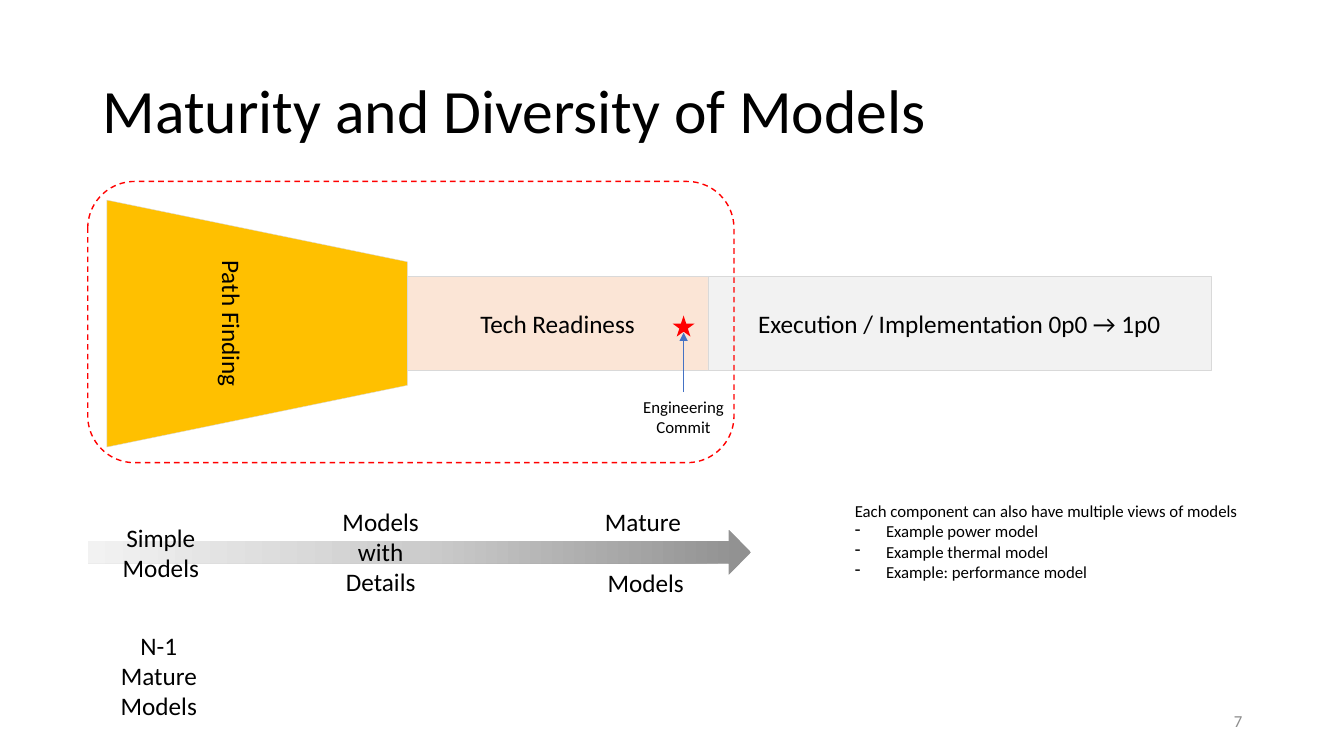
"""Build the slide on maturity and diversity of models."""
from copy import deepcopy

from lxml.etree import SubElement
from pptx import Presentation
from pptx.dml.color import RGBColor
from pptx.enum.dml import MSO_LINE
from pptx.enum.shapes import MSO_CONNECTOR, MSO_SHAPE
from pptx.enum.text import MSO_ANCHOR, PP_ALIGN
from pptx.oxml.ns import qn
from pptx.util import Inches, Pt

FONT = "Calibri"
COLORS = {
    "text": "000000", "number": "8C8C8C", "border": "D9D9D9",
    "finding": "FFC000", "readiness": "FBE5D6", "execution": "F2F2F2",
    "alert": "FF0000", "pointer": "4472C4",
}
MATURITY_GRADIENT = [(0, "909090"), (50, "CCCCCC"), (100, "F2F2F2")]
TITLE = "Maturity and Diversity of Models"
SLIDE_NUMBER = "7"
COMMIT_LABEL = "Engineering Commit"
PHASE_LEFT, PHASE_MIDDLE = 4.04, 3.21
BAR_HEIGHT = 0.93
FINDING_LENGTH, FINDING_MOUTH = 2.98, 2.45
BARS = [
    ("Tech Readiness", 2.98, "readiness"),
    ("Execution / Implementation 0p0 → 1p0", 4.99, "execution"),
]
STAGE_WIDTH = 1.31
STAGES = [
    (["Simple Models"], 0.94, 5.13, 0.71),
    (["Models with Details"], 3.12, 4.97, 1.01),
    (["Mature ", "Models"], 5.75, 4.97, 1.01),
    (["N-1 Mature Models"], 0.92, 6.2, 1.01),
]
STAGE_LINE = 22
VIEWS_HEADING = "Each component can also have multiple views of models"
VIEWS = ["Example power model", "Example thermal model", "Example: performance model"]
VIEW_INDENT = 0.31


def rgb(name):
    return RGBColor.from_string(COLORS[name])


def write(shape, lines, size, align=PP_ALIGN.CENTER, anchor=MSO_ANCHOR.TOP,
          color="text", wrap=True):
    frame = shape.text_frame
    frame.word_wrap = wrap
    frame.vertical_anchor = anchor
    for index, line in enumerate(lines):
        paragraph = frame.add_paragraph() if index else frame.paragraphs[0]
        paragraph.alignment = align
        run = paragraph.add_run()
        run.text = line
        run.font.name = FONT
        run.font.size = Pt(size)
        run.font.color.rgb = rgb(color)
    return frame.paragraphs


def add_text(slide, box, lines, size, **style):
    shape = slide.shapes.add_textbox(*map(Inches, box))
    return shape, write(shape, lines, size, **style)


def add_shape(slide, kind, box, fill=None, line=None, width=0.25):
    shape = slide.shapes.add_shape(kind, *map(Inches, box))
    shape.shadow.inherit = False
    if fill:
        shape.fill.solid()
        shape.fill.fore_color.rgb = rgb(fill)
    else:
        shape.fill.background()
    if line:
        shape.line.color.rgb = rgb(line)
        shape.line.width = Pt(width)
    else:
        shape.line.fill.background()
    return shape


def add_maturity_arrow(slide):
    arrow = add_shape(slide, MSO_SHAPE.RIGHT_ARROW, (0.87, 5.26, 6.58, 0.44))
    arrow.fill.gradient()
    arrow.fill.gradient_angle = 180
    stop_list = arrow.element.spPr.find(qn("a:gradFill")).find(qn("a:gsLst"))
    stop_list.append(deepcopy(stop_list[0]))
    for element, (position, _) in zip(stop_list, MATURITY_GRADIENT):
        element.set("pos", str(position * 1000))
    for stop, (_, color) in zip(arrow.fill.gradient_stops, MATURITY_GRADIENT):
        stop.color.rgb = RGBColor.from_string(color)


def add_phases(slide):
    finding = add_shape(
        slide, MSO_SHAPE.TRAPEZOID,
        (PHASE_LEFT - (FINDING_LENGTH + FINDING_MOUTH) / 2,
         PHASE_MIDDLE - FINDING_LENGTH / 2, FINDING_MOUTH, FINDING_LENGTH),
        "finding", "border")
    finding.rotation = 90
    write(finding, ["Path Finding"], 18, anchor=MSO_ANCHOR.MIDDLE)
    left = PHASE_LEFT
    for label, width, fill in BARS:
        box = (left, PHASE_MIDDLE - BAR_HEIGHT / 2, width, BAR_HEIGHT)
        bar = add_shape(slide, MSO_SHAPE.RECTANGLE, box, fill, "border")
        write(bar, [label], 18, anchor=MSO_ANCHOR.MIDDLE)
        left += width
    scope = add_shape(slide, MSO_SHAPE.ROUNDED_RECTANGLE, (0.87, 1.8, 6.41, 2.79),
                      line="alert", width=1)
    scope.line.dash_style = MSO_LINE.DASH


def add_commit(slide):
    add_shape(slide, MSO_SHAPE.STAR_5_POINT, (6.67, 3.13, 0.22, 0.21), "alert")
    label, _ = add_text(slide, (6.28, 3.89, 1, 0.5), [COMMIT_LABEL], 12)
    pointer = slide.shapes.add_connector(
        MSO_CONNECTOR.STRAIGHT, *map(Inches, (6.78, 3.89, 6.78, 3.3)))
    pointer.begin_connect(label, 0)
    pointer.line.color.rgb = rgb("pointer")
    pointer.line.width = Pt(0.5)
    properties = pointer.element.spPr
    SubElement(properties.find(qn("a:ln")), qn("a:tailEnd"), type="triangle")
    SubElement(properties, qn("a:effectLst"))


def add_stages(slide):
    for lines, left, top, height in STAGES:
        _, paragraphs = add_text(slide, (left, top, STAGE_WIDTH, height), lines, 18)
        for paragraph in paragraphs[1:]:
            paragraph.space_before = Pt(STAGE_LINE)


def add_views(slide):
    _, paragraphs = add_text(slide, (8.38, 4.92, 4.04, 0.91), [VIEWS_HEADING, *VIEWS],
                             12, align=PP_ALIGN.LEFT, wrap=False)
    for paragraph in paragraphs[1:]:
        properties = paragraph._p.get_or_add_pPr()
        properties.set("marL", str(Inches(VIEW_INDENT)))
        properties.set("indent", str(-Inches(VIEW_INDENT)))
        SubElement(properties, qn("a:buChar"), char="-")


def main():
    presentation = Presentation()
    presentation.slide_width = Inches(13.33)
    presentation.slide_height = Inches(7.5)
    slide = presentation.slides.add_slide(presentation.slide_layouts[6])
    add_maturity_arrow(slide)
    _, paragraphs = add_text(slide, (0.92, 0.4, 11.5, 1.45), [TITLE], 44,
                             align=PP_ALIGN.LEFT, anchor=MSO_ANCHOR.MIDDLE)
    paragraphs[0].line_spacing = 0.9
    add_text(slide, (9.42, 6.95, 3, 0.4), [SLIDE_NUMBER], 12, align=PP_ALIGN.RIGHT,
             anchor=MSO_ANCHOR.MIDDLE, color="number")
    add_phases(slide)
    add_commit(slide)
    add_stages(slide)
    add_views(slide)
    presentation.save("out.pptx")


if __name__ == "__main__":
    main()
